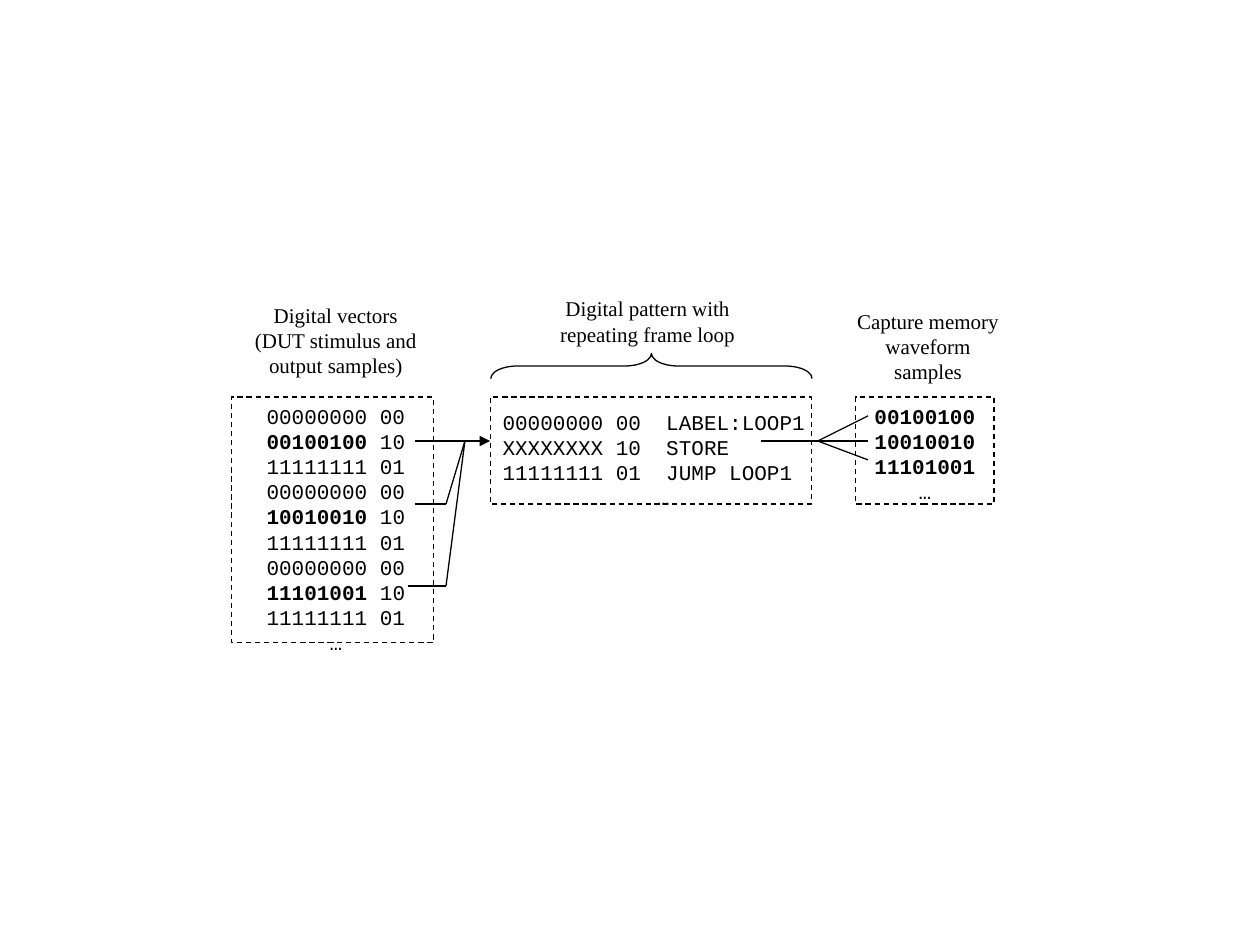
from dataclasses import dataclass

from lxml.etree import SubElement
from pptx import Presentation
from pptx.dml.color import RGBColor
from pptx.enum.dml import MSO_LINE
from pptx.enum.shapes import MSO_CONNECTOR, MSO_SHAPE
from pptx.enum.text import MSO_ANCHOR, PP_ALIGN
from pptx.oxml.ns import qn
from pptx.util import Inches, Pt


@dataclass(frozen=True)
class Theme:
    ink: RGBColor = RGBColor(0, 0, 0)
    code_font: str = "Courier New"
    label_font: str = "Times New Roman"
    text_size: Pt = Pt(12)
    line_width: Pt = Pt(0.75)


THEME = Theme()
FRAME_TOP = 3.15
SIGNAL_Y = 3.5
ELLIPSIS = "…"

CAPTURED = ["00100100", "10010010", "11101001"]
PATTERN = [
    "00000000 00  LABEL:LOOP1",
    "XXXXXXXX 10  STORE",
    "11111111 01  JUMP LOOP1",
]


def add_text(slide, box, lines, font=THEME.label_font, align=PP_ALIGN.CENTER,
             last_align=None):
    """Each line is a string or a list of (text, bold) runs."""
    textbox = slide.shapes.add_textbox(*map(Inches, box))
    frame = textbox.text_frame
    frame.word_wrap = True
    frame.vertical_anchor = MSO_ANCHOR.TOP
    for index, line in enumerate(lines):
        paragraph = frame.paragraphs[0] if index == 0 else frame.add_paragraph()
        paragraph.alignment = align
        for text, bold in [(line, False)] if isinstance(line, str) else line:
            run = paragraph.add_run()
            run.text = text
            run.font.name = font
            run.font.size = THEME.text_size
            run.font.bold = bold
            run.font.color.rgb = THEME.ink
    if last_align is not None:
        paragraph.alignment = last_align


def style_line(line):
    line.color.rgb = THEME.ink
    line.width = THEME.line_width


def add_outline(slide, preset, box):
    outline = slide.shapes.add_shape(preset, *map(Inches, box))
    outline.shadow.inherit = False
    outline.fill.background()
    style_line(outline.line)
    return outline


def add_dashed_frame(slide, left, width, height):
    frame = add_outline(slide, MSO_SHAPE.RECTANGLE, (left, FRAME_TOP, width, height))
    frame.line.dash_style = MSO_LINE.DASH


def add_line(slide, start, end, arrow=False):
    connector = slide.shapes.add_connector(
        MSO_CONNECTOR.STRAIGHT, *map(Inches, (*start, *end)))
    style_line(connector.line)
    properties = connector._element.spPr
    if arrow:
        SubElement(properties.find(qn("a:ln")), qn("a:tailEnd"), type="triangle")
    SubElement(properties, qn("a:effectLst"))


def add_vectors(slide):
    vectors = []
    for sample in CAPTURED:
        vectors += ["00000000 00", [(sample, True), (" 10", False)], "11111111 01"]
    add_text(slide, (1.89, FRAME_TOP, 1.55, 2.1), vectors + [ELLIPSIS],
             font=THEME.code_font)
    add_dashed_frame(slide, 1.84, 1.6, 1.95)
    add_text(slide, (1.74, 2.35, 1.85, 0.75),
             ["Digital vectors", "(DUT stimulus and output samples)"])


def add_pattern(slide):
    add_text(slide, (3.89, 3.2, 2.75, 0.9), PATTERN + [ELLIPSIS],
             font=THEME.code_font, align=PP_ALIGN.LEFT, last_align=PP_ALIGN.CENTER)
    brace = add_outline(slide, MSO_SHAPE.LEFT_BRACE, (5.07, 1.63, 0.2, 2.55))
    brace.rotation = 90
    brace.adjustments[0] = 1.06
    brace.adjustments[1] = 0.5
    add_text(slide, (4.09, 2.3, 2.1, 0.5),
             ["Digital pattern with repeating frame loop"])
    add_dashed_frame(slide, 3.89, 2.55, 0.85)


def add_capture_memory(slide):
    add_dashed_frame(slide, 6.79, 1.1, 0.85)
    samples = [[(sample, True)] for sample in CAPTURED]
    add_text(slide, (6.79, FRAME_TOP, 1.1, 0.9), samples + [ELLIPSIS],
             font=THEME.code_font)
    add_text(slide, (6.59, 2.4, 1.55, 0.7), ["Capture memory", "waveform", "samples"])


def add_signal_lines(slide):
    add_line(slide, (3.29, SIGNAL_Y), (3.89, SIGNAL_Y), arrow=True)
    for left, y in [(3.24, 4.65), (3.29, 4)]:
        bend = (3.54, y)
        add_line(slide, (left, y), bend)
        add_line(slide, bend, (3.69, SIGNAL_Y))
    add_line(slide, (6.04, SIGNAL_Y), (6.89, SIGNAL_Y))
    for sample_y in (3.3, 3.65):
        add_line(slide, (6.49, SIGNAL_Y), (6.89, sample_y))


def main():
    presentation = Presentation()
    presentation.slide_width = Inches(10)
    presentation.slide_height = Inches(7.5)
    slide = presentation.slides.add_slide(presentation.slide_layouts[6])
    add_vectors(slide)
    add_capture_memory(slide)
    add_pattern(slide)
    add_signal_lines(slide)
    presentation.save("out.pptx")


if __name__ == "__main__":
    main()
